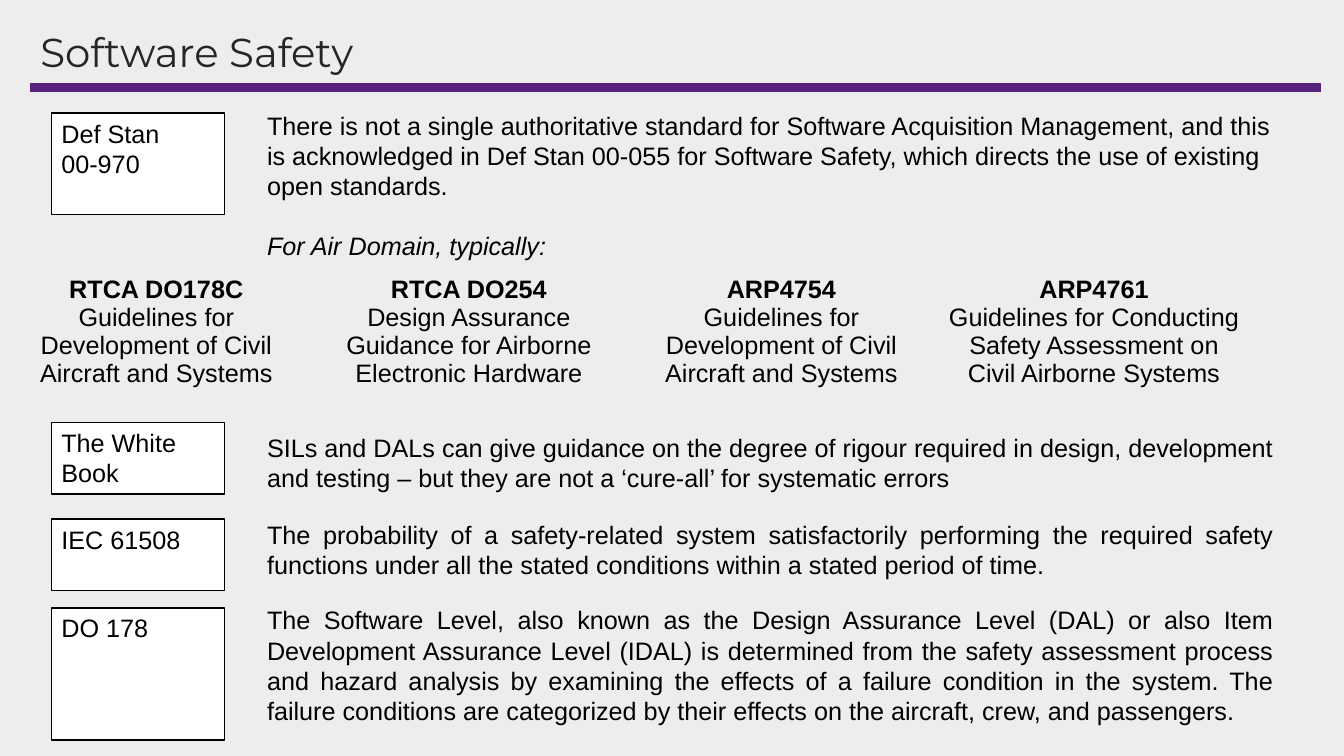
from lxml.etree import SubElement
from pptx import Presentation
from pptx.dml.color import RGBColor
from pptx.enum.shapes import MSO_CONNECTOR as Connector, MSO_SHAPE as Shape
from pptx.enum.text import MSO_ANCHOR as Anchor, PP_ALIGN as Align
from pptx.oxml.ns import qn
from pptx.util import Inches, Pt


def color(value):
    return RGBColor.from_string(value)


class SlideBuilder:
    BODY = {"name": "Arial", "size": Pt(18), "bold": False, "italic": False}
    TITLE = {"name": "Montserrat", "size": Pt(28.8), "bold": False}
    INK, TITLE_INK, ACCENT = "000000", "262626", "56227D"
    PAPER, BACKGROUND = "FFFFFF", "EDEDED"

    def __init__(self, presentation):
        self.slide = presentation.slides.add_slide(presentation.slide_layouts[5])
        fill = self.slide.background.fill
        fill.solid()
        fill.fore_color.rgb = color(self.BACKGROUND)

    def style(self, paragraph, values, ink, align=Align.LEFT):
        paragraph.alignment = align
        for name, value in values.items():
            setattr(paragraph.font, name, value)
        paragraph.font.color.rgb = color(ink)

    def fill_text(self, frame, paragraphs, align=Align.LEFT):
        frame.word_wrap = True
        for index, (text, changes) in enumerate(paragraphs):
            paragraph = frame.add_paragraph() if index else frame.paragraphs[0]
            paragraph.text = text
            self.style(paragraph, self.BODY | changes, self.INK, align)

    def title(self, text, left, top, width, height):
        title = self.slide.shapes.title
        title.left, title.top = Inches(left), Inches(top)
        title.width, title.height = Inches(width), Inches(height)
        title.text_frame.text = text
        title.text_frame.vertical_anchor = Anchor.MIDDLE
        paragraph = title.text_frame.paragraphs[0]
        paragraph.line_spacing = 0.9
        self.style(paragraph, self.TITLE, self.TITLE_INK)

    def rule(self, left, right, top, weight):
        line = self.slide.shapes.add_connector(
            Connector.STRAIGHT, Inches(left), Inches(top), Inches(right), Inches(top))
        line.line.color.rgb = color(self.ACCENT)
        line.line.width = Pt(weight)
        SubElement(line._element.spPr, qn("a:effectLst"))

    def label(self, lines, left, top, width, height):
        shape = self.slide.shapes.add_shape(
            Shape.RECTANGLE, Inches(left), Inches(top), Inches(width), Inches(height))
        shape.shadow.inherit = False
        shape.fill.solid()
        shape.fill.fore_color.rgb = color(self.PAPER)
        shape.line.color.rgb = color(self.INK)
        shape.line.width = Pt(1)
        shape.text_frame.vertical_anchor = Anchor.TOP
        self.fill_text(shape.text_frame, [(line, {}) for line in lines])

    def text(self, paragraphs, left, top, width, height, align=Align.LEFT):
        box = self.slide.shapes.add_textbox(
            Inches(left), Inches(top), Inches(width), Inches(height))
        self.fill_text(box.text_frame, paragraphs, align)
        return box.text_frame

    def table(self, entries, left, top, width, height):
        frame = self.slide.shapes.add_table(
            1, len(entries), Inches(left), Inches(top), Inches(width), Inches(height))
        table = frame.table
        table.first_row = table.horz_banding = False
        for cell, (heading, description) in zip(table.iter_cells(), entries):
            self.fill_text(cell.text_frame,
                           [(heading, {"bold": True}), (description, {})], Align.CENTER)
            cell.vertical_anchor = Anchor.TOP
            for side in ("a:lnL", "a:lnR", "a:lnT", "a:lnB"):
                border = SubElement(cell._tc.tcPr, qn(side), {"w": "0"})
                SubElement(border, qn("a:noFill"))
            cell.fill.background()


LABEL_LEFT, LABEL_WIDTH = 0.51, 1.72
TEXT_LEFT, TEXT_WIDTH = 2.55, 10.18

STANDARDS = [
    ("RTCA DO178C", "Guidelines for Development of Civil Aircraft and Systems"),
    ("RTCA DO254", "Design Assurance Guidance for Airborne Electronic Hardware"),
    ("ARP4754", "Guidelines for Development of Civil Aircraft and Systems"),
    ("ARP4761", "Guidelines for Conducting Safety Assessment on Civil Airborne Systems"),
]

INTRODUCTION = [
    ("There is not a single authoritative standard for Software Acquisition Management, "
     "and this is acknowledged in Def Stan 00-055 for Software Safety, which directs the "
     "use of existing open standards.", {}),
    ("For Air Domain, typically:", {"italic": True}),
]

ROWS = [
    (["Def Stan", "00-970"], 1.12, 1.01, INTRODUCTION, 1.04, 1.62, Align.LEFT),
    (["The White Book"], 4.19, 0.71,
     [("SILs and DALs can give guidance on the degree of rigour required in design, "
       "development and testing – but they are not a ‘cure-all’ for systematic errors", {})],
     4.24, 0.71, Align.LEFT),
    (["IEC 61508"], 5.15, 0.71,
     [("The probability of a safety-related system satisfactorily performing the required "
       "safety functions under all the stated conditions within a stated period of time.", {})],
     5.1, 0.71, Align.JUSTIFY),
    (["DO 178"], 6.03, 1.31,
     [("The Software Level, also known as the Design Assurance Level (DAL) or also Item "
       "Development Assurance Level (IDAL) is determined from the safety assessment process "
       "and hazard analysis by examining the effects of a failure condition in the system. "
       "The failure conditions are categorized by their effects on the aircraft, crew, and "
       "passengers.", {})],
     5.95, 1.31, Align.JUSTIFY),
]


def main():
    presentation = Presentation()
    presentation.slide_width, presentation.slide_height = Inches(13.33), Inches(7.5)
    builder = SlideBuilder(presentation)
    builder.rule(0.3, 13.1, 0.87, 6)
    builder.title("Software Safety", 0.3, 0.28, 12.8, 0.53)
    for lines, label_top, label_height, paragraphs, top, height, align in ROWS:
        builder.label(lines, LABEL_LEFT, label_top, LABEL_WIDTH, label_height)
        frame = builder.text(paragraphs, TEXT_LEFT, top, TEXT_WIDTH, height, align)
        for paragraph in frame.paragraphs[1:]:
            paragraph.space_before = Pt(21.6)
    builder.table(STANDARDS, 0, 2.68, 12.4, 1.3)
    presentation.save("out.pptx")


if __name__ == "__main__":
    main()
